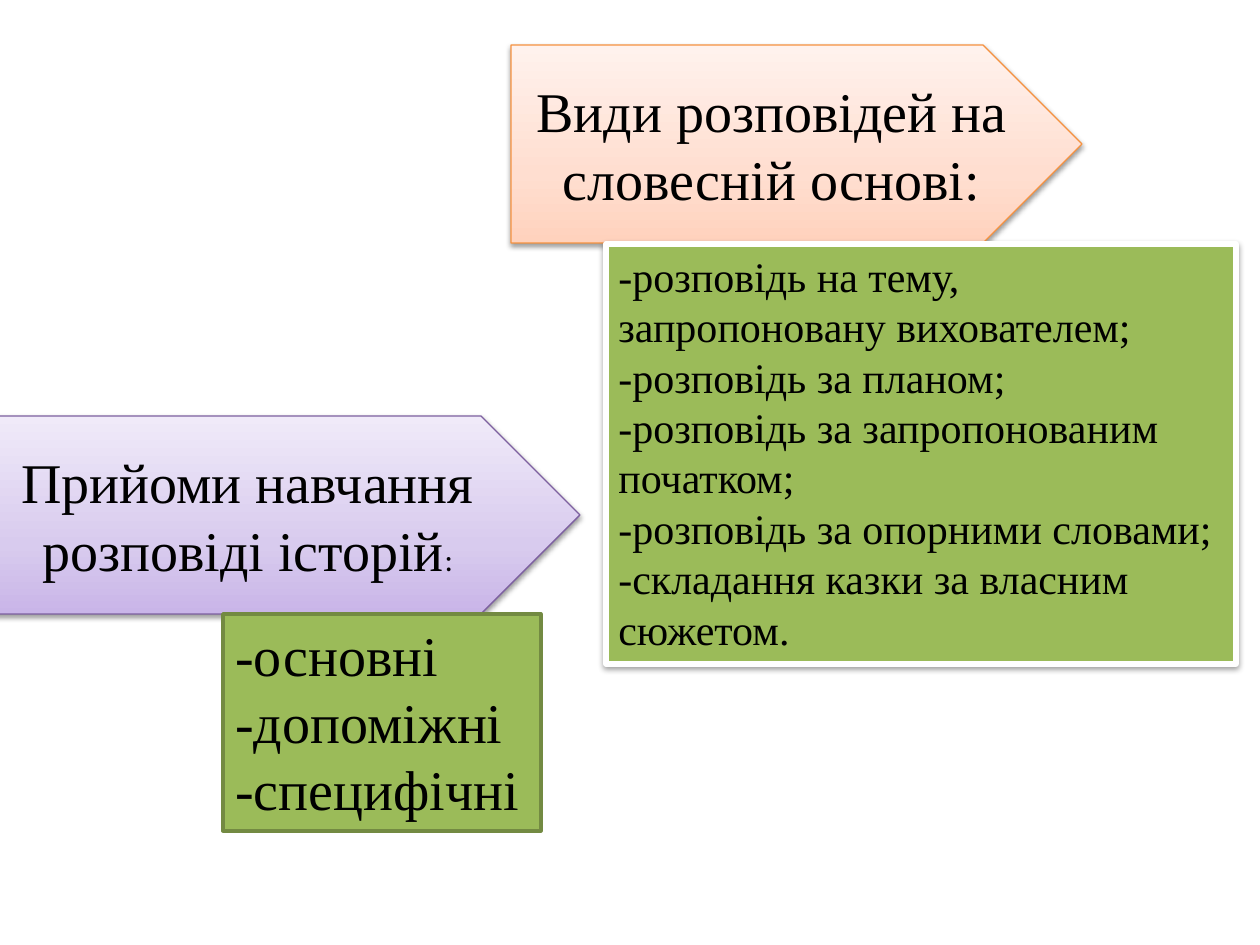
from lxml import etree
from pptx import Presentation
from pptx.dml.color import RGBColor
from pptx.enum.shapes import MSO_SHAPE as Shape
from pptx.enum.text import MSO_ANCHOR as Anchor, MSO_AUTO_SIZE as AutoSize, PP_ALIGN as Align
from pptx.oxml import parse_xml
from pptx.oxml.ns import nsdecls, qn
from pptx.util import Emu, Pt

EMU_PER_PX = 914400 / 126
SERIF = "Times New Roman"

BLACK = RGBColor(0x00, 0x00, 0x00)
WHITE = RGBColor(0xFF, 0xFF, 0xFF)
GREEN = RGBColor(0x9B, 0xBB, 0x59)
DARK_GREEN = RGBColor(0x73, 0x8A, 0x42)
PURPLE = RGBColor(0x7D, 0x60, 0xA0)
ORANGE = RGBColor(0xF6, 0x92, 0x40)
# Gradient colours from bottom to top
PURPLES = (RGBColor(0xC9, 0xB5, 0xE8), RGBColor(0xD8, 0xCB, 0xEE), RGBColor(0xF0, 0xEA, 0xF9))
PEACHES = (RGBColor(0xFF, 0xD2, 0xBD), RGBColor(0xFF, 0xDE, 0xD0), RGBColor(0xFF, 0xF2, 0xED))
STOPS = (0, 35, 100)

TECHNIQUES = ("-основні", "-допоміжні", "-специфічні")
STORY_TYPES = (
    "-розповідь на тему, запропоновану вихователем;",
    "-розповідь за планом;",
    "-розповідь за запропонованим початком;",
    "-розповідь за опорними словами;",
    "-складання казки за власним сюжетом.",
)


def px(length):
    return Emu(round(length * EMU_PER_PX))


def set_values(target, values):
    for name, value in values.items():
        setattr(target, name, value)


def add_outlined(slide, kind, box, line_color, line_width):
    shape = slide.shapes.add_shape(kind, *map(px, box))
    shape.shadow.inherit = False
    shape.line.color.rgb = line_color
    shape.line.width = Pt(line_width)
    return shape


def add_shadow(shape):
    effects = shape._element.spPr.find(qn("a:effectLst"))
    effects.append(parse_xml(
        f'<a:outerShdw {nsdecls("a")} blurRad="40000" dist="20000" dir="5400000" rotWithShape="0">'
        '<a:srgbClr val="000000"><a:alpha val="38000"/></a:srgbClr></a:outerShdw>'))


def fill_gradient(shape, colors):
    shape.fill.gradient()
    shape.fill.gradient_angle = 90
    stop_list = shape._element.spPr.find(qn("a:gradFill")).find(qn("a:gsLst"))
    for stop in list(stop_list):
        stop_list.remove(stop)
    for position, color in zip(STOPS, colors):
        stop = etree.SubElement(stop_list, qn("a:gs"), pos=str(position * 1000))
        etree.SubElement(stop, qn("a:srgbClr"), val=str(color))


def add_run(paragraph, text, size, font=SERIF):
    run = paragraph.add_run()
    run.text = text
    set_values(run.font, {"size": Pt(size), "name": font})
    run.font.color.rgb = BLACK


def add_arrow(slide, box, colors, line_color, runs):
    arrow = add_outlined(slide, Shape.PENTAGON, box, line_color, 0.75)
    fill_gradient(arrow, colors)
    add_shadow(arrow)
    set_values(arrow.text_frame, {"word_wrap": True, "vertical_anchor": Anchor.MIDDLE})
    paragraph = arrow.text_frame.paragraphs[0]
    paragraph.alignment = Align.CENTER
    for run in runs:
        add_run(paragraph, *run)


def add_list_box(slide, box, line_color, line_width, lines, size):
    shape = add_outlined(slide, Shape.RECTANGLE, box, line_color, line_width)
    shape.fill.solid()
    shape.fill.fore_color.rgb = GREEN
    frame = shape.text_frame
    set_values(frame, {"word_wrap": True, "vertical_anchor": Anchor.TOP,
                       "auto_size": AutoSize.SHAPE_TO_FIT_TEXT})
    for index, line in enumerate(lines):
        paragraph = frame.add_paragraph() if index else frame.paragraphs[0]
        paragraph.alignment = Align.LEFT
        add_run(paragraph, line, size)
    return shape


def main():
    presentation = Presentation()
    set_values(presentation, {"slide_width": px(1260), "slide_height": px(945)})
    slide = presentation.slides.add_slide(presentation.slide_layouts[6])

    # Heading arrows
    add_arrow(slide, (-35, 416, 615, 198), PURPLES, PURPLE,
              [("Прийоми навчання розповіді історій", 32), (":", 18, "Calibri")])
    add_arrow(slide, (511, 45, 571, 198), PEACHES, ORANGE,
              [("Види розповідей на словесній основі:", 32)])

    # Lists under the arrows
    add_list_box(slide, (223, 614, 318, 217), DARK_GREEN, 2, TECHNIQUES, 32)
    story_box = add_list_box(slide, (606, 244, 630, 420), WHITE, 3, STORY_TYPES, 24)
    add_shadow(story_box)

    presentation.save("out.pptx")


if __name__ == "__main__":
    main()
